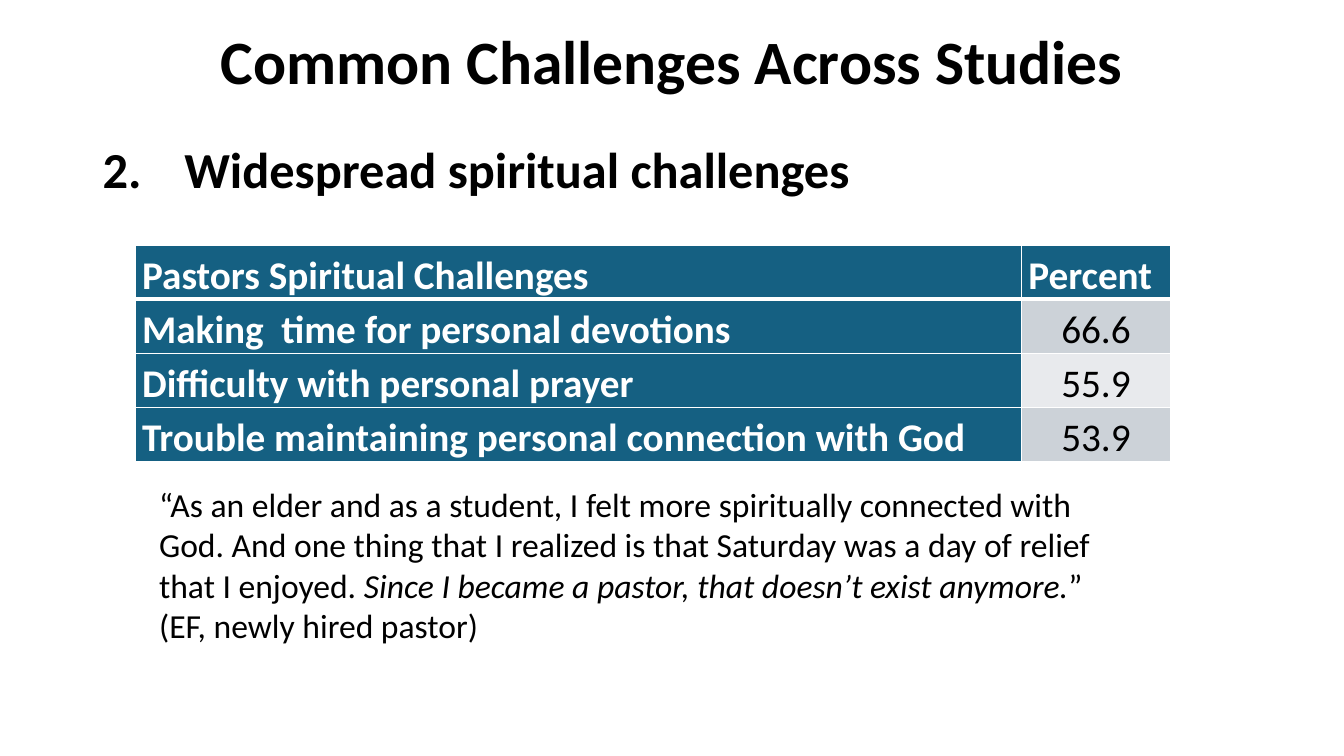
from lxml.etree import SubElement
from pptx import Presentation
from pptx.dml.color import RGBColor
from pptx.enum.text import MSO_ANCHOR, PP_ALIGN
from pptx.oxml import parse_xml
from pptx.oxml.ns import nsdecls, qn
from pptx.util import Inches, Pt

BLACK, WHITE, TEAL = "000000", "FFFFFF", "156082"
BANDS = ("CCD2D8", "E8EAED")


def color(hex_string):
    return RGBColor.from_string(hex_string)


class SlideBuilder:
    """Holds the text style and the slide being filled."""

    font = "Calibri"

    def __init__(self, slide):
        self.slide = slide

    def style(self, paragraph, size, ink=BLACK, bold=False, align=PP_ALIGN.LEFT):
        paragraph.alignment = align
        for run in paragraph.runs:
            run.font.name = self.font
            run.font.size = Pt(size)
            run.font.bold = bold
            run.font.color.rgb = color(ink)

    def text(self, left, top, width, height, content, size, anchor=MSO_ANCHOR.TOP, **style):
        """Add a wrapping text box and return its first paragraph."""
        shape = self.slide.shapes.add_textbox(
            Inches(left), Inches(top), Inches(width), Inches(height))
        frame = shape.text_frame
        frame.word_wrap = True
        frame.vertical_anchor = anchor
        frame.text = content
        paragraph = frame.paragraphs[0]
        self.style(paragraph, size, **style)
        return paragraph

    def number(self, paragraph, start, indent):
        """Give a paragraph an automatic number with a hanging indent."""
        properties = paragraph._p.get_or_add_pPr()
        properties.set("marL", str(Inches(indent)))
        properties.set("indent", str(-Inches(indent)))
        SubElement(properties, qn("a:buFont"), typeface="+mj-lt")
        SubElement(properties, qn("a:buAutoNum"), type="arabicPeriod", startAt=str(start))

    def borders(self, cell, **widths):
        """Draw white cell borders; widths in points are keyed L, R, T, B."""
        properties = cell._tc.get_or_add_tcPr()
        for index, (side, width) in enumerate(widths.items()):
            properties.insert(index, parse_xml(
                f'<a:ln{side} {nsdecls("a")} w="{Pt(width)}"><a:solidFill>'
                f'<a:srgbClr val="{WHITE}"/></a:solidFill></a:ln{side}>'))

    def cell(self, cell, content, fill, **style):
        cell.fill.solid()
        cell.fill.fore_color.rgb = color(fill)
        cell.margin_left = cell.margin_right = Inches(0.07)
        cell.margin_top = cell.margin_bottom = 0
        cell.text = content
        paragraph = cell.text_frame.paragraphs[0]
        paragraph.line_spacing = 1.15
        paragraph.space_after = Pt(8)
        self.style(paragraph, 28, **style)

    def table(self, left, top, column_widths, row_height, rows):
        table = self.slide.shapes.add_table(
            len(rows), len(column_widths), Inches(left), Inches(top),
            Inches(sum(column_widths)), Inches(row_height * len(rows))).table
        for column, width in zip(table.columns, column_widths):
            column.width = Inches(width)
        for row_index, values in enumerate(rows):
            for column_index, value in enumerate(values):
                cell = table.cell(row_index, column_index)
                if row_index == 0 or column_index == 0:
                    self.cell(cell, value, TEAL, ink=WHITE, bold=True)
                else:
                    band = BANDS[(row_index - 1) % 2]
                    self.cell(cell, value, band, align=PP_ALIGN.CENTER)
                self.borders(cell, L=1, R=1, T=3 if row_index == 1 else 1,
                             B=3 if row_index == 0 else 1)


def main():
    presentation = Presentation()
    presentation.slide_width = Inches(13.33)
    presentation.slide_height = Inches(7.5)
    builder = SlideBuilder(presentation.slides.add_slide(presentation.slide_layouts[6]))

    title = builder.text(0.92, 0.16, 11.5, 0.96, "Common Challenges Across Studies", 44,
                         anchor=MSO_ANCHOR.MIDDLE, bold=True, align=PP_ALIGN.CENTER)
    title.line_spacing = 0.9

    heading = builder.text(0.92, 1.23, 11.5, 5.53, "Widespread spiritual challenges", 36,
                           bold=True)
    heading.line_spacing = 1.15
    heading.space_before = Pt(10)
    heading.space_after = Pt(8)
    builder.number(heading, start=2, indent=0.81)

    builder.table(1.34, 2.43, (8.79, 1.48), 0.47, (
        ("Pastors Spiritual Challenges", "Percent"),
        ("Making  time for personal devotions", "66.6"),
        ("Difficulty with personal prayer", "55.9"),
        ("Trouble maintaining personal connection with God", "53.9"),
    ))

    quote = builder.text(
        1.48, 4.75, 9.44, 1.72,
        "“As an elder and as a student, I felt more spiritually connected with God. "
        "And one thing that I realized is that Saturday was a day of relief that I enjoyed. ",
        24)
    quote.add_run().text = "Since I became a pastor, that doesn’t exist anymore."
    quote.add_run().text = "” (EF, newly hired pastor)"
    builder.style(quote, 24)
    quote.runs[1].font.italic = True

    presentation.save("out.pptx")


if __name__ == "__main__":
    main()
